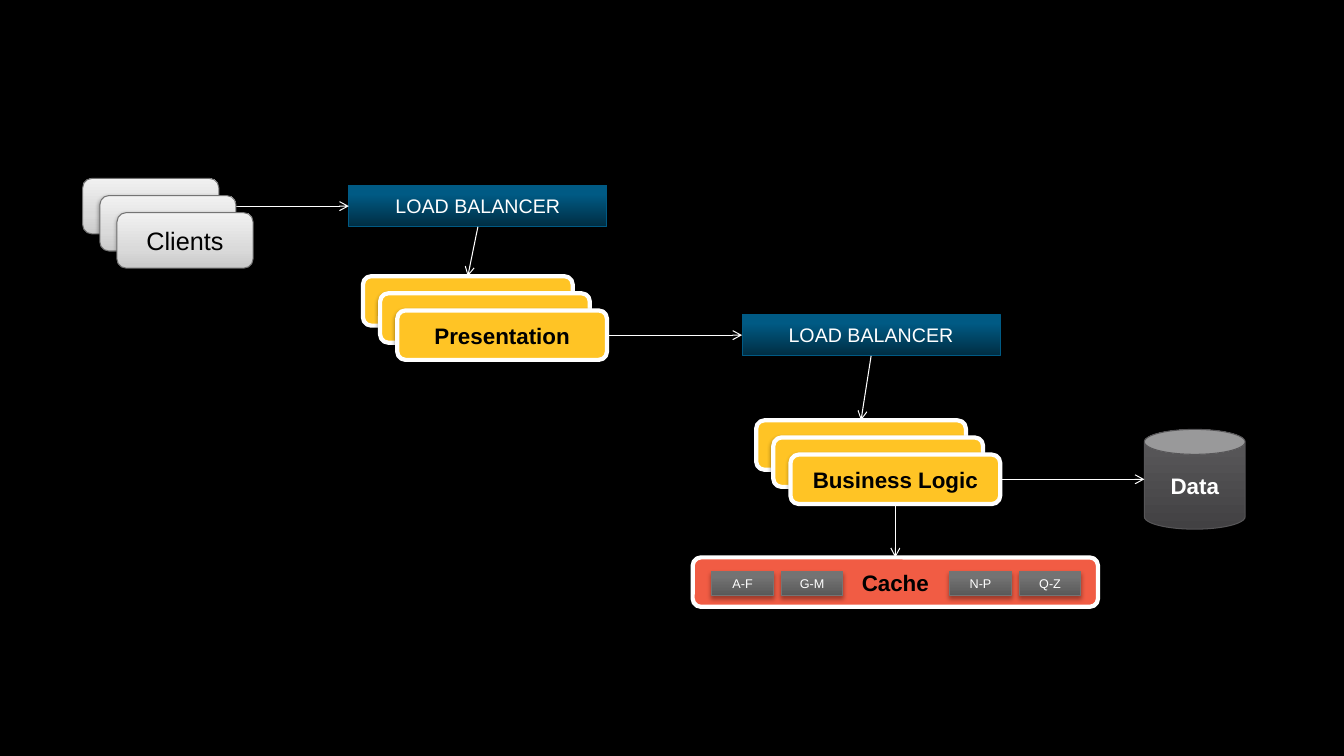
from lxml.etree import SubElement
from pptx import Presentation
from pptx.dml.color import RGBColor
from pptx.enum.shapes import MSO_CONNECTOR, MSO_SHAPE as Preset
from pptx.enum.text import MSO_ANCHOR, PP_ALIGN
from pptx.oxml.ns import qn
from pptx.util import Emu, Inches, Pt

BLACK = RGBColor(0x00, 0x00, 0x00)
WHITE = RGBColor(0xFF, 0xFF, 0xFF)
YELLOW = RGBColor(0xFF, 0xC4, 0x25)
RED = RGBColor(0xF1, 0x5C, 0x44)
BLUE_DARK = RGBColor(0x00, 0x2D, 0x42)
BLUE = RGBColor(0x00, 0x5A, 0x84)
GRAY = RGBColor(0x74, 0x74, 0x74)
DATA_LINE = RGBColor(0x57, 0x56, 0x58)

BLUE_FADE = ((0, BLUE_DARK), (80, BLUE), (100, BLUE))
CLIENT_FADE = ((0, RGBColor(0xCA, 0xCA, 0xCA)), (35, RGBColor(0xDA, 0xDA, 0xDA)),
               (100, RGBColor(0xF1, 0xF1, 0xF1)))
SHARD_FADE = ((0, RGBColor(0x59, 0x59, 0x59)), (80, RGBColor(0x73, 0x73, 0x73)),
              (100, GRAY))
DATA_FADE = ((0, RGBColor(0x42, 0x41, 0x43)), (80, RGBColor(0x56, 0x55, 0x57)),
             (100, RGBColor(0x57, 0x55, 0x58)))

SOFT_SHADOW = {"opacity": 38, "distance": 1.6}
FIRM_SHADOW = {"opacity": 35, "distance": 1.8}
CARD_STEP = Inches(0.17)
TOP, LEFT, BOTTOM, RIGHT = range(4)


def set_fade(shape, stops):
    """Fill with a gradient that runs from the bottom to the top."""
    shape.fill.gradient()
    shape.fill.gradient_angle = 90
    stop_list = shape._element.spPr.find(qn("a:gradFill")).find(qn("a:gsLst"))
    for stop in list(stop_list):
        stop_list.remove(stop)
    for percent, color in stops:
        stop = SubElement(stop_list, qn("a:gs"), pos=str(percent * 1000))
        SubElement(stop, qn("a:srgbClr"), val=str(color))


def set_shadow(shape, opacity, distance):
    shape.shadow.inherit = False
    effects = shape._element.spPr.find(qn("a:effectLst"))
    shadow = SubElement(effects, qn("a:outerShdw"), blurRad=str(Pt(3.1)),
                        dist=str(Pt(distance)), dir="5400000", rotWithShape="0")
    color = SubElement(shadow, qn("a:srgbClr"), val=str(BLACK))
    SubElement(color, qn("a:alpha"), val=str(opacity * 1000))


def write_text(shape, text, size=16, color=BLACK, bold=False):
    frame = shape.text_frame
    frame.word_wrap = True
    frame.vertical_anchor = MSO_ANCHOR.MIDDLE
    paragraph = frame.paragraphs[0]
    paragraph.text = text
    paragraph.alignment = PP_ALIGN.CENTER
    font = paragraph.font
    font.name, font.size, font.bold = "Arial", Pt(size), bold
    font.color.rgb = color


def add_box(slide, preset, box, fill, line, line_width=0.75, shadow=SOFT_SHADOW):
    """Draw a shape; fill is one colour or a tuple of gradient stops."""
    shape = slide.shapes.add_shape(preset, *box)
    if isinstance(fill, RGBColor):
        shape.fill.solid()
        shape.fill.fore_color.rgb = fill
    else:
        set_fade(shape, fill)
    shape.line.color.rgb = line
    shape.line.width = Pt(line_width)
    set_shadow(shape, **shadow)
    return shape


def add_stack(slide, box, text, text_format, **style):
    """Draw three overlapping cards, with the text on the front one."""
    left, top, width, height = box
    cards = [add_box(slide, Preset.ROUNDED_RECTANGLE,
                     (left + i * CARD_STEP, top + i * CARD_STEP, width, height), **style)
             for i in range(3)]
    write_text(cards[-1], text, **text_format)
    return cards


def add_tier(slide, left, top, text, drop):
    """Draw a load balancer with its stack of servers the given drop below its top."""
    balancer = add_box(slide, Preset.RECTANGLE, (left, top, Inches(2.56), Inches(0.41)),
                       fill=BLUE_FADE, line=BLUE, shadow=FIRM_SHADOW)
    write_text(balancer, "LOAD BALANCER", size=14, color=WHITE)
    cards = add_stack(slide, (left + Inches(0.14), top + drop, Inches(2.08), Inches(0.49)),
                      text, {"bold": True}, fill=YELLOW, line=WHITE, line_width=3)
    add_arrow(slide, balancer, BOTTOM, cards[0], TOP)
    return balancer, cards[-1]


def add_cache(slide, box):
    left, top = box[:2]
    cache = add_box(slide, Preset.ROUNDED_RECTANGLE, box, fill=RED, line=WHITE, line_width=3)
    write_text(cache, "Cache", bold=True)
    for offset, names in ((0.19, ("A-F", "G-M")), (2.55, ("N-P", "Q-Z"))):
        for i, name in enumerate(names):
            shard_box = (left + Inches(offset + i * 0.69), top + Inches(0.14),
                         Inches(0.61), Inches(0.24))
            shard = add_box(slide, Preset.RECTANGLE, shard_box, fill=SHARD_FADE,
                            line=GRAY, shadow=FIRM_SHADOW)
            write_text(shard, name, size=9, color=WHITE)
    return cache


def add_data(slide, box):
    data = add_box(slide, Preset.CAN, box, fill=DATA_FADE, line=DATA_LINE, shadow=FIRM_SHADOW)
    write_text(data, "Data", color=WHITE, bold=True)
    return data


def add_arrow(slide, source, source_side, target, target_side=None):
    """Join two shapes; without a target side, stop at the target's left edge."""
    end = target.left, Emu(target.top + target.height // 2)
    arrow = slide.shapes.add_connector(MSO_CONNECTOR.STRAIGHT, *end, *end)
    arrow.begin_connect(source, source_side)
    if target_side is not None:
        arrow.end_connect(target, target_side)
    arrow.line.color.rgb = WHITE
    arrow.line.width = Pt(0.75)
    SubElement(arrow.line._get_or_add_ln(), qn("a:tailEnd"), type="arrow")
    SubElement(arrow._element.spPr, qn("a:effectLst"))
    return arrow


def add_architecture(slide):
    balancer, presentation_card = add_tier(slide, Inches(3.46), Inches(1.84),
                                           "Presentation", Inches(0.9))
    logic_balancer, logic_card = add_tier(slide, Inches(7.36), Inches(3.12),
                                          "Business Logic", Inches(1.05))
    clients = add_stack(slide, (Inches(0.82), Inches(1.77), Inches(1.35), Inches(0.55)),
                        "Clients", {"size": 18}, fill=CLIENT_FADE, line=GRAY)
    data = add_data(slide, (Inches(11.35), Inches(4.26), Inches(1), Inches(0.99)))
    cache = add_cache(slide, (Inches(6.87), Inches(5.53), Inches(4.02), Inches(0.49)))

    client_arrow = add_arrow(slide, clients[0], RIGHT, balancer, LEFT)
    clients[1]._element.addprevious(client_arrow._element)
    add_arrow(slide, presentation_card, RIGHT, logic_balancer, LEFT)
    add_arrow(slide, logic_card, RIGHT, data)
    add_arrow(slide, logic_card, BOTTOM, cache, TOP)


def main():
    presentation = Presentation()
    presentation.slide_width = Inches(13.33)
    presentation.slide_height = Inches(7.5)
    slide = presentation.slides.add_slide(presentation.slide_layouts[6])
    slide.background.fill.solid()
    slide.background.fill.fore_color.rgb = BLACK
    add_architecture(slide)
    presentation.save("out.pptx")


if __name__ == "__main__":
    main()
